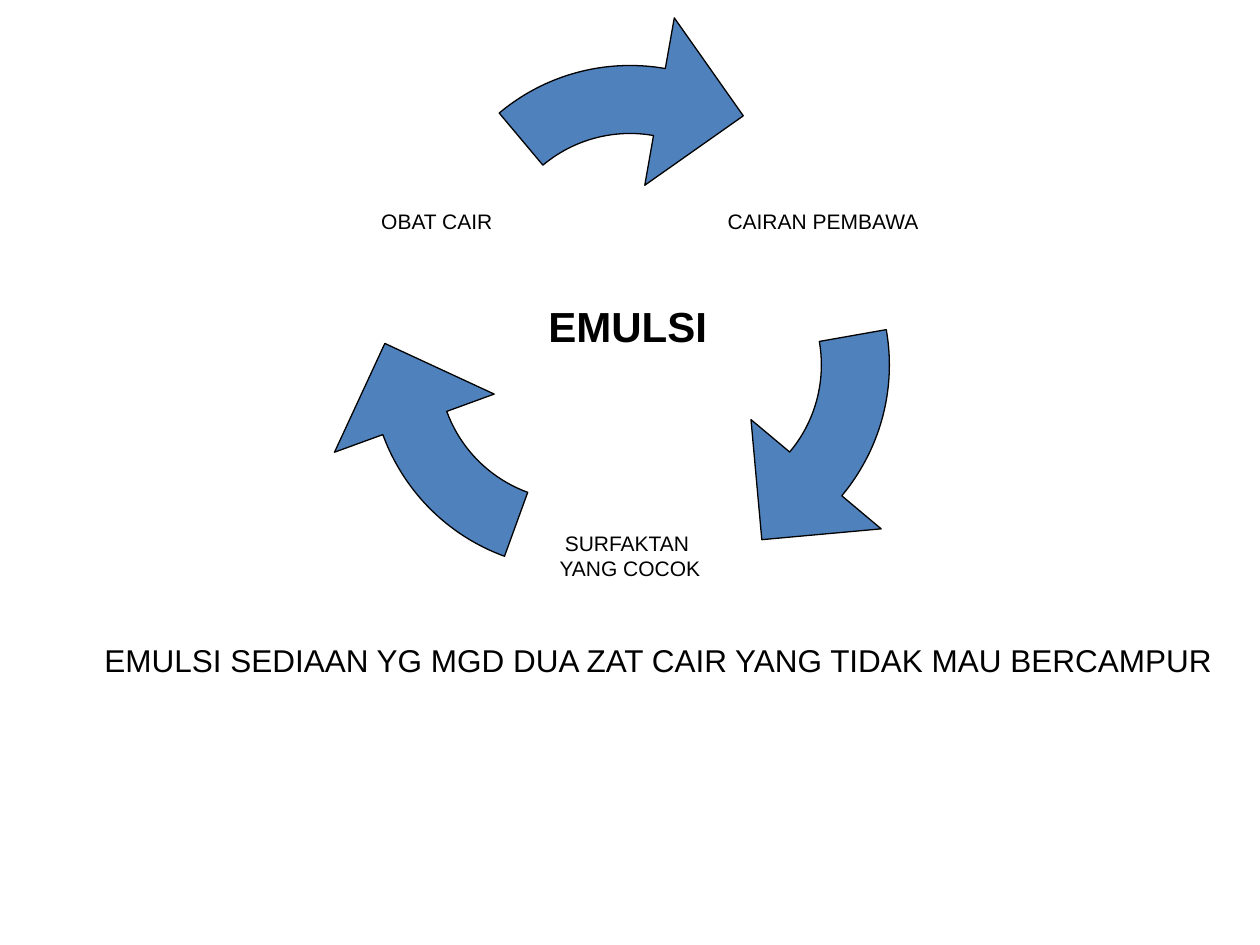
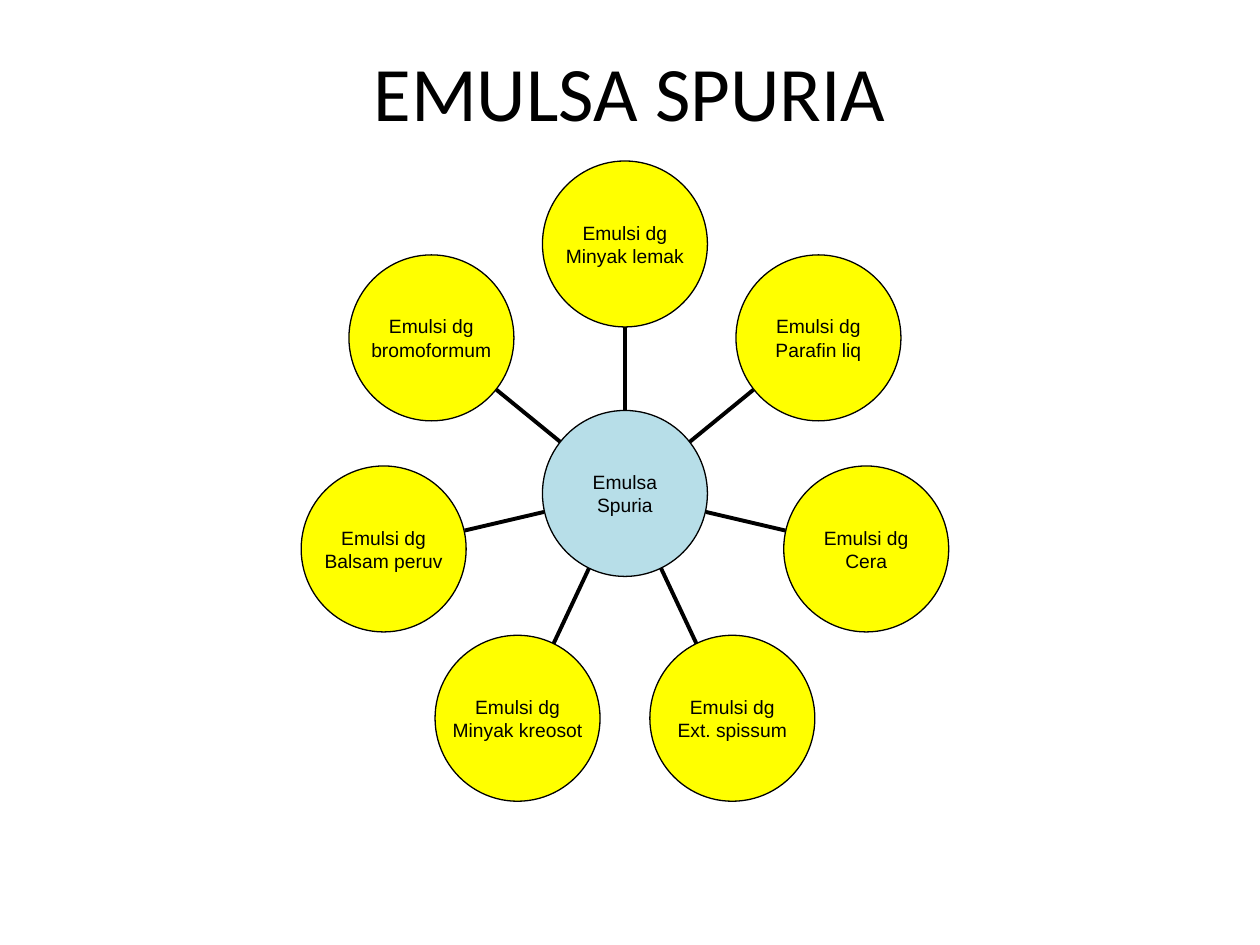
from math import atan, cos, radians, degrees, sin, tan

from lxml.etree import SubElement
from pptx import Presentation
from pptx.dml.color import RGBColor
from pptx.enum.shapes import MSO_CONNECTOR as Connector, MSO_SHAPE as Shape
from pptx.enum.text import MSO_ANCHOR as Anchor, PP_ALIGN as Align
from pptx.oxml.ns import qn
from pptx.util import Emu, Pt

BLACK = RGBColor(0x00, 0x00, 0x00)
BLUE = RGBColor(0x4F, 0x81, 0xBD)
YELLOW = RGBColor(0xFF, 0xFF, 0x00)
PALE_BLUE = RGBColor(0xB7, 0xDE, 0xE8)
BODY_FONT, TITLE_FONT = "Arial", "Calibri"

CYCLE_LABELS = [["CAIRAN PEMBAWA"], ["SURFAKTAN ", "YANG COCOK"], ["OBAT CAIR"]]
EMULSION_KINDS = ["Minyak lemak", "Parafin liq", "Cera", "Ext. spissum",
                  "Minyak kreosot", "Balsam peruv", "bromoformum"]


def px(length):
    """Turn px at 126 to the inch into EMU."""
    return Emu(round(length * 914400 / 126))


def around(center, radius_x, radius_y, angle):
    """Return the point at a clockwise angle from the top of an ellipse."""
    turn = radians(angle)
    return center[0] + radius_x * sin(turn), center[1] - radius_y * cos(turn)


def centered(center, width, height):
    """Return the box of a given size around a center."""
    return center[0] - width / 2, center[1] - height / 2, width, height


def write(shape, lines, size, align=Align.CENTER, font=BODY_FONT, bold=False, wrap=False):
    """Write one paragraph for each line into a shape."""
    frame = shape.text_frame
    frame.word_wrap = wrap
    for index, line in enumerate(lines):
        para = frame.add_paragraph() if index else frame.paragraphs[0]
        para.alignment = align
        span = para.add_run()
        span.text = line
        span.font.name, span.font.size, span.font.bold = font, Pt(size), bold
        span.font.color.rgb = BLACK
    return frame


def add_text(shapes, box, lines, size, **style):
    """Add a text box."""
    write(shapes.add_textbox(*map(px, box)), lines, size, **style)


def center_text(frame):
    """Center the text in its shape without insets."""
    frame.vertical_anchor = Anchor.MIDDLE
    frame.margin_left = frame.margin_top = frame.margin_right = frame.margin_bottom = 0


def paint(shape, color):
    """Give a shape a plain fill and a thin black outline."""
    shape.shadow.inherit = False
    shape.fill.solid()
    shape.fill.fore_color.rgb = color
    shape.line.color.rgb = BLACK
    shape.line.width = Pt(0.75)


def arc(radius, start, end):
    """Return two Bezier controls and the end of an arc, as radius and angle."""
    lean = atan(4 / 3 * tan(radians(end - start) / 4))
    reach = radius / cos(lean)
    return [(reach, start + degrees(lean)), (reach, end - degrees(lean)), (radius, end)]


def bend(segments):
    """Merge three line segments into one cubic curve."""
    curve, *rest = segments
    curve.tag = qn("a:cubicBezTo")
    for segment in rest:
        curve.append(segment[0])
        segment.getparent().remove(segment)


def add_curved_arrow(shapes, center, turn):
    """Draw a block arrow bent around a center and rotated as a whole."""
    outer, inner, tail, neck = 203.5, 135.5, -40, 10
    outline = [(inner, neck), *arc(inner, neck, 0), *arc(inner, 0, tail),
               (outer, tail), *arc(outer, tail, 0), *arc(outer, 0, neck),
               (255, neck), (190.5, 36.5), (85, neck)]
    points = [tuple(map(px, around(center, radius, radius, angle)))
              for radius, angle in outline]
    builder = shapes.build_freeform(*points[0], scale=1.0)
    builder.add_line_segments(points[1:], close=True)
    arrow = builder.convert_to_shape()
    paint(arrow, BLUE)

    left, top, width, height = map(px, centered(center, 2 * outer, 2 * outer))
    track = next(arrow._element.iter(qn("a:path")))
    track.set("w", str(width))
    track.set("h", str(height))
    for point in track.iter(qn("a:pt")):
        point.set("x", str(int(point.get("x")) + arrow.left - left))
        point.set("y", str(int(point.get("y")) + arrow.top - top))
    segments = track.findall(qn("a:lnTo"))
    for first in (0, 3, 7, 10):
        bend(segments[first:first + 3])
    arrow.left, arrow.top, arrow.width, arrow.height = left, top, width, height
    arrow.rotation = turn


def add_label(shapes, center, lines):
    """Add a centered label on an unfilled square."""
    label = shapes.add_shape(Shape.RECTANGLE, *map(px, centered(center, 164, 164)))
    label.shadow.inherit = False
    label.fill.background()
    label.line.fill.background()
    center_text(write(label, lines, 12))


def add_cycle(page, box):
    """Draw three arrows and their labels around the word in the middle."""
    shapes = page.shapes.add_group_shape().shapes
    left, top, width, height = box
    middle = left + width / 2, top + height / 2
    turns = range(0, 360, 120)
    for turn in turns:
        add_curved_arrow(shapes, around(middle, 64.5, 64, turn), turn)
    for turn, lines in zip(turns, CYCLE_LABELS):
        add_label(shapes, around(middle, 223, 223, turn + 60), lines)
    add_text(shapes, (middle[0] - 94, middle[1] - 39, 184, 63), ["EMULSI"], 24,
             align=Align.LEFT, bold=True)


def add_circle(shapes, center, lines, color):
    """Add a labelled circle."""
    circle = shapes.add_shape(Shape.OVAL, *map(px, centered(center, 165, 166)))
    paint(circle, color)
    center_text(write(circle, lines, 11))


def add_spoke(shapes, start, end):
    """Add a thick black line."""
    spoke = shapes.add_connector(Connector.STRAIGHT, *map(px, (*start, *end)))
    spoke.line.color.rgb = BLACK
    spoke.line.width = Pt(2.25)
    SubElement(spoke._element.spPr, qn("a:effectLst"))


def add_wheel(page, box):
    """Place the kinds of emulsion at equal angles around the hub."""
    shapes = page.shapes.add_group_shape().shapes
    left, top, width, height = box
    radius_x, radius_y = (width - 165) / 2, (height - 166) / 2
    hub = left + width / 2, top + height / 2
    for index, kind in reversed(list(enumerate(EMULSION_KINDS))):
        angle = index * 360 / len(EMULSION_KINDS)
        add_spoke(shapes, around(hub, 83, 83, angle),
                  around(hub, radius_x - 83, radius_y - 83, angle))
        add_circle(shapes, around(hub, radius_x, radius_y, angle),
                   ["Emulsi dg", kind], YELLOW)
    add_circle(shapes, hub, ["Emulsa", "Spuria"], PALE_BLUE)


def main():
    """Build the two slides and save them."""
    deck = Presentation()
    deck.slide_width, deck.slide_height = px(1260), px(945)
    blank = deck.slide_layouts[6]

    page = deck.slides.add_slide(blank)
    add_cycle(page, (330, 33, 600, 600))
    add_text(page.shapes, (92, 635, 1142, 50),
             ["EMULSI SEDIAAN YG MGD DUA ZAT CAIR YANG TIDAK MAU BERCAMPUR"], 18,
             align=Align.LEFT)

    page = deck.slides.add_slide(blank)
    add_text(page.shapes, (63, 38, 1134, 158), ["EMULSA SPURIA"], 44,
             font=TITLE_FONT, wrap=True)
    add_wheel(page, (295, 161, 660, 665))

    deck.save("out.pptx")


if __name__ == "__main__":
    main()
